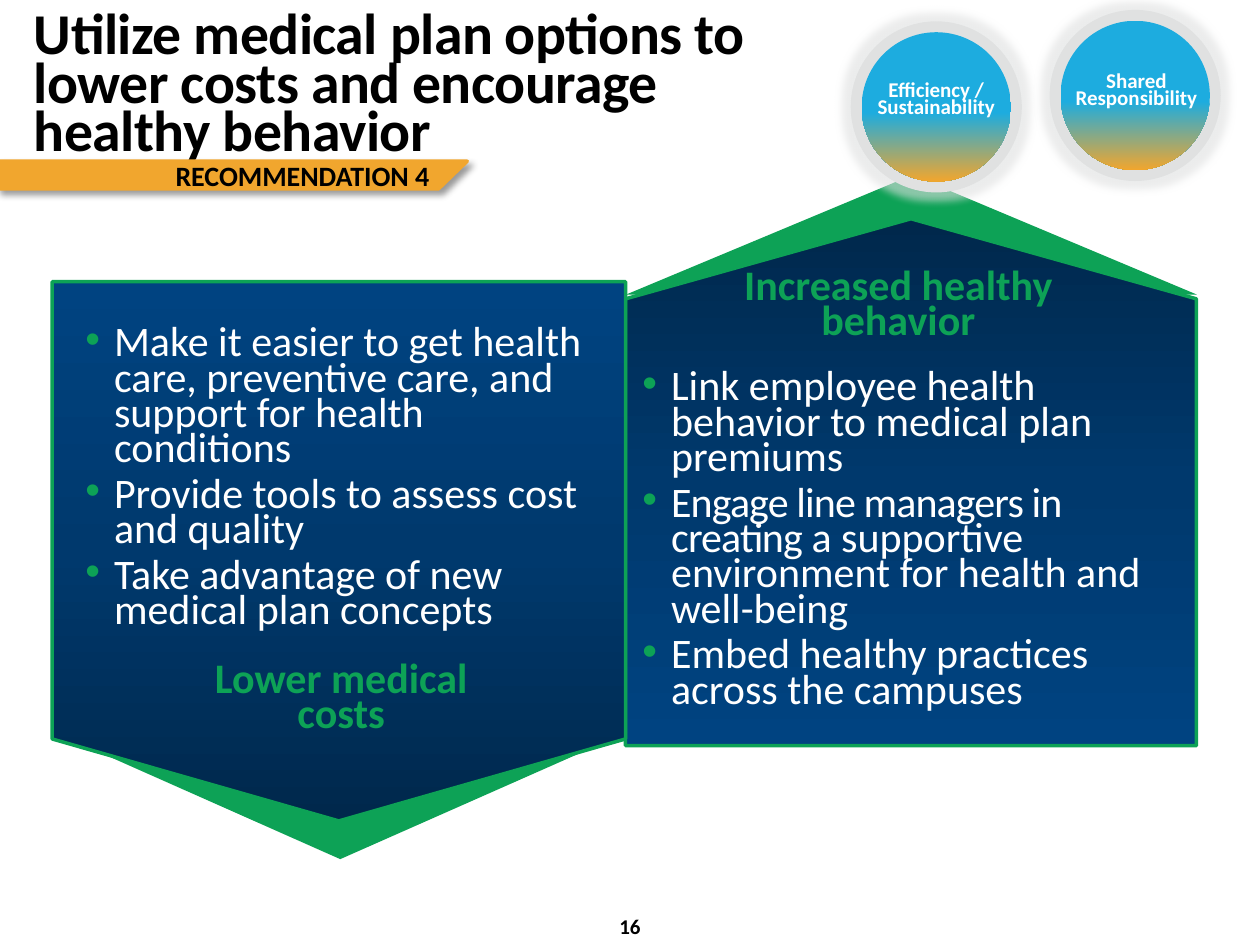
from copy import deepcopy
from dataclasses import dataclass

from lxml import etree
from pptx import Presentation
from pptx.dml.color import RGBColor
from pptx.enum.shapes import MSO_SHAPE
from pptx.enum.text import MSO_ANCHOR, MSO_AUTO_SIZE, PP_ALIGN
from pptx.oxml.ns import qn
from pptx.util import Cm, Pt

LEFT, CENTER, RIGHT = PP_ALIGN.LEFT, PP_ALIGN.CENTER, PP_ALIGN.RIGHT
MIDDLE = MSO_ANCHOR.MIDDLE
FIXED, GROW = MSO_AUTO_SIZE.NONE, MSO_AUTO_SIZE.SHAPE_TO_FIT_TEXT
PENTAGON, ELLIPSE = MSO_SHAPE.PENTAGON, MSO_SHAPE.OVAL


@dataclass(frozen=True)
class Theme:
    font: str = "Calibri"
    black: str = "000000"
    white: str = "FFFFFF"
    green: str = "0DA256"
    amber: str = "F1A62E"
    ring: str = "E0E1E1"
    panel: tuple = ((0, "00284C"), (50, "00396D"), (100, "004381"))
    disc: tuple = ((54, "1DACDF"), (100, "F1A62E"))
    title_size: int = 33
    body_size: int = 24
    banner_size: int = 16
    small_size: int = 12
    tight: float = 0.7


def set_format(target, values):
    for name, value in values.items():
        setattr(target, name, value)


def add_child(parent, tag, **attributes):
    return etree.SubElement(parent, qn(tag), attributes)


class SlideBuilder:
    def __init__(self, slide, theme):
        self.slide, self.theme = slide, theme

    def format_run(self, run, size, color, bold=False, spacing=0):
        set_format(run.font, {"name": self.theme.font, "size": Pt(size), "bold": bold})
        run.font.color.rgb = RGBColor.from_string(color)
        if spacing:
            run.font._element.set("spc", str(round(spacing * 100)))

    def fill_text(self, frame, lines, size, color, bold=False, align=CENTER,
                  line_spacing=None, spacing=0):
        """Put one paragraph per line into a text frame."""
        for i, line in enumerate(lines):
            paragraph = frame.paragraphs[0] if i == 0 else frame.add_paragraph()
            paragraph.text = line
            set_format(paragraph, {"alignment": align, "line_spacing": line_spacing})
            for run in paragraph.runs:
                self.format_run(run, size, color, bold, spacing)
            for line_break in paragraph._p.findall(qn("a:br")):
                line_break.append(deepcopy(paragraph.runs[0].font._element))

    def title(self, text, box):
        title = self.slide.shapes.title
        set_format(title, dict(zip(("left", "top", "width", "height"), map(Cm, box))))
        set_format(title.text_frame, {"word_wrap": True, "auto_size": FIXED,
                                      "vertical_anchor": MIDDLE})
        self.fill_text(title.text_frame, [text], self.theme.title_size,
                       self.theme.black, True, LEFT, self.theme.tight, -0.3)

    def text_box(self, box):
        frame = self.slide.shapes.add_textbox(*map(Cm, box)).text_frame
        set_format(frame, {"word_wrap": True, "auto_size": GROW})
        return frame

    def label(self, lines, box, size, color, line_spacing=None):
        self.fill_text(self.text_box(box), lines, size, color, True,
                       line_spacing=line_spacing)

    def bullets(self, items, box):
        """Each item is a list of (text, letter spacing) runs."""
        frame = self.text_box(box)
        for i, item in enumerate(items):
            paragraph = frame.paragraphs[0] if i == 0 else frame.add_paragraph()
            properties = paragraph._p.get_or_add_pPr()
            indent = Cm(0.58)
            properties.set("marL", str(indent))
            properties.set("indent", str(-indent))
            bullet_color = add_child(properties, "a:buClr")
            add_child(bullet_color, "a:srgbClr", val=self.theme.green)
            add_child(properties, "a:buFont", typeface="Arial")
            add_child(properties, "a:buChar", char="•")
            set_format(paragraph, {"line_spacing": self.theme.tight,
                                   "space_before": Pt(6 if i else 0)})
            for text, spacing in item:
                run = paragraph.add_run()
                run.text = text
                self.format_run(run, self.theme.body_size, self.theme.white,
                                spacing=spacing)

    def paint(self, shape, fill, line=None, angle=0):
        """Fill with one colour, or with a gradient given as (percent, colour) stops."""
        shape.shadow.inherit = False
        if isinstance(fill, str):
            shape.fill.solid()
            shape.fill.fore_color.rgb = RGBColor.from_string(fill)
        else:
            shape.fill.gradient()
            shape.fill.gradient_angle = angle
            stops = shape._element.spPr.find(".//" + qn("a:gsLst"))
            stops.clear()
            for percent, color in fill:
                stop = add_child(stops, "a:gs", pos=str(percent * 1000))
                add_child(stop, "a:srgbClr", val=color)
        if line:
            shape.line.color.rgb = RGBColor.from_string(line)
            shape.line.width = Pt(2)
        else:
            shape.line.fill.background()

    def effect(self, shape, tag, color, alpha, **attributes):
        effects = shape._element.spPr.find(qn("a:effectLst"))
        tint = add_child(add_child(effects, tag, **attributes), "a:srgbClr", val=color)
        add_child(tint, "a:alpha", val=str(alpha * 1000))

    def polygon(self, points, fill, line=None):
        start, *rest = [(Cm(x), Cm(y)) for x, y in points]
        builder = self.slide.shapes.build_freeform(*start)
        builder.add_line_segments(rest, close=True)
        shape = builder.convert_to_shape()
        self.paint(shape, fill, line)
        return shape

    def banner(self, text):
        shape = self.polygon([(-0.03, 3.81), (8.84, 3.81), (9.42, 3.25), (-0.03, 3.25)],
                             self.theme.amber, self.theme.amber)
        self.effect(shape, "a:outerShdw", self.theme.black, 40, blurRad=str(Pt(4)),
                    dist=str(Pt(3)), dir=str(45 * 60000), algn="tl", rotWithShape="0")
        set_format(shape.text_frame, {"vertical_anchor": MIDDLE, "word_wrap": True,
                                      "margin_right": Cm(0.76)})
        self.fill_text(shape.text_frame, [text], self.theme.banner_size,
                       self.theme.black, True, RIGHT)

    def panel(self, box, rotation):
        """Pentagon whose box is given as it stands after a quarter turn."""
        left, top, width, height = box
        shift = (width - height) / 2
        shape = self.slide.shapes.add_shape(
            PENTAGON, *map(Cm, (left + shift, top - shift, height, width)))
        shape.rotation = rotation
        shape.adjustments[0] = 0.152
        self.paint(shape, self.theme.panel, self.theme.green, 180)

    def badge(self, left, top, lines, text_box):
        ring_size, rim = 3.45, 0.22
        disc_size = ring_size - 2 * rim
        ring, disc = [
            self.slide.shapes.add_shape(
                ELLIPSE, *map(Cm, (left + gap, top + gap, size, size)))
            for gap, size in ((0, ring_size), (rim, disc_size))]
        self.paint(ring, self.theme.ring)
        self.effect(ring, "a:glow", self.theme.ring, 60, rad=str(Pt(9)))
        self.paint(disc, self.theme.disc, angle=270)
        self.label(lines, text_box, self.theme.small_size, self.theme.white,
                   self.theme.tight)


def main():
    deck = Presentation()
    deck.slide_width, deck.slide_height = Cm(25.4), Cm(19.05)
    theme = Theme()
    page = SlideBuilder(deck.slides.add_slide(deck.slide_layouts[5]), theme)
    heading = (theme.body_size, theme.green, theme.tight)

    # Page number and recommendation banner
    page.label(["16"], (0, 18.29, 25.4, 0.76), theme.small_size, theme.black)
    page.banner("RECOMMENDATION 4")

    # Healthy behavior panel, pointing up
    page.polygon([(12.62, 5.94), (24.13, 5.94), (18.39, 3.53)], theme.green)
    page.panel((12.61, 4.41, 11.51, 10.62), 270)
    page.label(["Increased healthy behavior"], (13.97, 5.36, 8.28, 1.73), *heading)
    page.bullets([
        [("Link employee health behavior to medical plan premiums", 0)],
        [("Engage line managers in creating ", -0.5),
         ("a supportive environment for health and well-being", 0)],
        [("Embed healthy practices across the campuses", 0)],
    ], (12.7, 7.39, 10.87, 7.19))

    # Medical costs panel, pointing down
    page.polygon([(12.65, 14.76), (1.09, 14.76), (6.86, 17.32)], theme.green)
    page.panel((1.05, 5.68, 11.56, 10.87), 90)
    page.bullets([
        [("Make it easier to get health care, preventive care, "
          "and support for health conditions", 0)],
        [("Provide tools to assess cost and quality", 0)],
        [("Take advantage of new medical plan concepts", 0)],
    ], (1.47, 6.5, 10.8, 7.24))
    page.label(["Lower medical costs"], (3.68, 13.28, 6.4, 1.73), *heading)

    # Title and goal badges
    page.title("Utilize medical plan options to \vlower costs and encourage \v"
               "healthy behavior", (0.43, 0.2, 24.56, 3.18))
    page.badge(17.15, 0.43, ["Efficiency / Sustainability"], (17.4, 1.55, 2.95, 0.97))
    page.badge(21.16, 0.2, ["Shared", "Responsibility"], (21.31, 1.37, 3.2, 0.99))

    deck.save("out.pptx")


if __name__ == "__main__":
    main()
